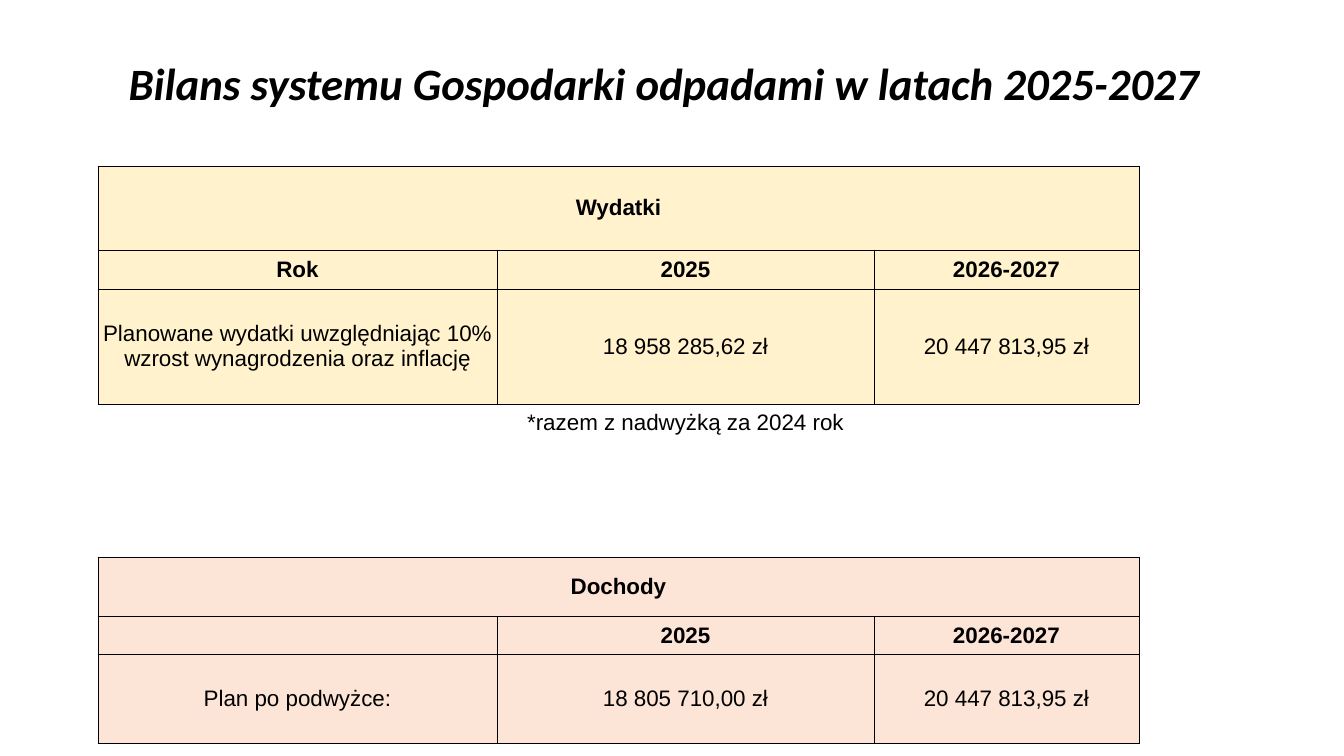
"""Builds a slide with the expenses and income of the waste system."""
from lxml.etree import SubElement
from pptx import Presentation
from pptx.dml.color import RGBColor
from pptx.enum.text import MSO_ANCHOR, PP_ALIGN
from pptx.oxml.ns import qn
from pptx.util import Pt

TITLE = "Bilans systemu Gospodarki odpadami w latach 2025-2027"
ROWS = [
    (84, "cream", True, ["Wydatki"]),
    (39, "cream", True, ["Rok", "2025", "2026-2027"]),
    (115, "cream", False, ["Planowane wydatki uwzględniając 10% wzrost wynagrodzenia oraz inflację",
                           "18 958 285,62 zł", "20 447 813,95 zł"]),
    (38, None, False, ["", "*razem z nadwyżką za 2024 rok"]),
    (38, None, False, []),
    (38, None, False, []),
    (39, None, False, []),
    (60, "peach", True, ["Dochody"]),
    (38, "peach", True, ["", "2025", "2026-2027"]),
    (89, "peach", False, ["Plan po podwyżce:", "18 805 710,00 zł", "20 447 813,95 zł"]),
]
COLS = [399, 377, 265, 54]
BODY = 3
COLORS = {"black": "000000", "cream": "FFF2CC", "peach": "FCE4D6"}
SIDES = {"a:lnL": (0, -1), "a:lnR": (0, 1), "a:lnT": (-1, 0), "a:lnB": (1, 0)}


def px(n):
    return round(n * 12192000 / 1344)


def color(name):
    return RGBColor.from_string(COLORS[name])


def style(part, font, size, bold, italic=False):
    part.alignment = PP_ALIGN.CENTER
    part.font.name, part.font.size = font, Pt(size)
    part.font.bold, part.font.italic = bold, italic
    part.font.color.rgb = color("black")


def filled(row, col):
    return 0 <= row < len(ROWS) and 0 <= col < BODY and ROWS[row][1] is not None


def border(cell, row, col):
    props = cell._tc.get_or_add_tcPr()
    for tag, (down, right) in SIDES.items():
        line = SubElement(props, qn(tag), w=str(Pt(0.5)))
        if filled(row, col) or filled(row + down, col + right):
            paint = SubElement(line, qn("a:solidFill"))
            SubElement(paint, qn("a:srgbClr"), val=COLORS["black"])
        else:
            SubElement(line, qn("a:noFill"))


def add_title(slide):
    box = slide.shapes.add_textbox(px(85), px(13), px(1159), px(146))
    frame = box.text_frame
    frame.word_wrap = True
    frame.vertical_anchor = MSO_ANCHOR.MIDDLE
    frame.text = TITLE
    head = frame.paragraphs[0]
    head.line_spacing = 0.9
    style(head, "Calibri", 32, True, True)


def add_budget(slide):
    high = sum(row[0] for row in ROWS)
    table = slide.shapes.add_table(len(ROWS), len(COLS), px(98), px(166),
                                   px(sum(COLS)), px(high)).table
    table.first_row = table.horz_banding = False
    for col, width in enumerate(COLS):
        table.columns[col].width = px(width)
    for row, (height, fill, bold, texts) in enumerate(ROWS):
        table.rows[row].height = px(height)
        for col in range(len(COLS)):
            cell = table.cell(row, col)
            border(cell, row, col)
            if filled(row, col):
                cell.fill.solid()
                cell.fill.fore_color.rgb = color(fill)
            else:
                cell.fill.background()
            cell.vertical_anchor = MSO_ANCHOR.MIDDLE
            cell.margin_left = cell.margin_right = px(1)
            cell.margin_top = cell.margin_bottom = px(5)
            cell.text_frame.text = texts[col] if col < len(texts) else ""
            style(cell.text_frame.paragraphs[0], "Arial", 16, bold)
        if len(texts) == 1:
            table.cell(row, 0).merge(table.cell(row, BODY - 1))


def main():
    deck = Presentation()
    deck.slide_width, deck.slide_height = px(1344), px(756)
    slide = deck.slides.add_slide(deck.slide_layouts[6])
    add_title(slide)
    add_budget(slide)
    deck.save("out.pptx")


if __name__ == "__main__":
    main()
